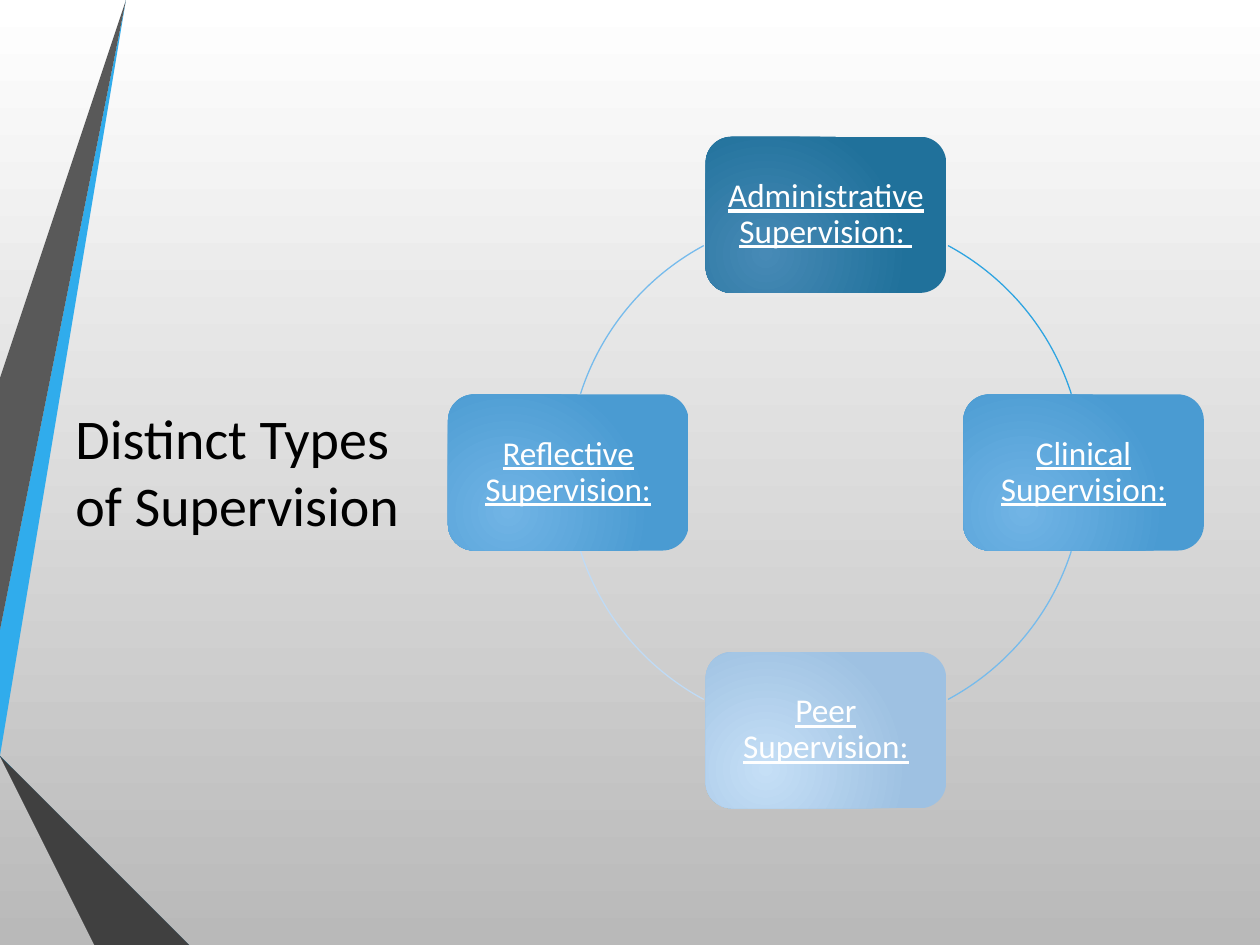
"""Build a slide showing four types of supervision around a ring."""
from typing import NamedTuple

import pptx
import pptx.dml.color
import pptx.enum.shapes
import pptx.enum.text
import pptx.oxml.ns
import pptx.util
from lxml import etree

Inches = pptx.util.Inches
Pt = pptx.util.Pt
MSO_SHAPE = pptx.enum.shapes.MSO_SHAPE

CENTER_X, CENTER_Y, RADIUS = 6.555, 3.75, 2.045
CARD_W, CARD_H = 1.91, 1.24


class Band(NamedTuple):
    color: str
    points: list[tuple[float, float]]


class Card(NamedTuple):
    text: str
    dx: int
    dy: int
    inner: str
    outer: str


class Arc(NamedTuple):
    start: float
    end: float
    color: str


BANDS = [
    Band("30ACEC", [(0, 5.44), (0, 5.75), (0.22, 5.79), (1.17, 0), (0.89, 0)]),
    Band("595959", [(0.83, 0), (0.55, 0), (0, 3.36), (0, 5.06)]),
    Band("262626", [(0, 6.19), (0, 6.21), (0.93, 7.5), (0.99, 7.5)]),
    Band("0C5A82", [(0, 5.79), (0, 5.8), (1.56, 7.5), (1.63, 7.5)]),
    Band("1287C3", [(0, 5.79), (1.63, 7.5), (2.33, 7.5), (0.22, 5.79), (0, 5.75)]),
    Band("404040", [(0, 6.19), (0.99, 7.5), (1.51, 7.5), (0, 5.86)]),
]
CARDS = [
    Card("Administrative Supervision: ", 0, -1, "478AB6", "20719B"),
    Card("Clinical Supervision:", 1, 0, "71B4E5", "4A9BD2"),
    Card("Peer Supervision:", 0, 1, "C5DFF6", "9EC1E2"),
    Card("Reflective Supervision:", -1, 0, "71B4E5", "4A9BD2"),
]
ARCS = [
    Arc(298.3, 342.2, "2EA4E1"),
    Arc(17.8, 61.7, "76BBEC"),
    Arc(118.3, 162.2, "BFDBF6"),
    Arc(197.8, 241.7, "76BBEC"),
]


def rgb(value: str) -> pptx.dml.color.RGBColor:
    return pptx.dml.color.RGBColor.from_string(value)


def set_gradient(fill, first: str, last: str) -> None:
    fill.gradient()
    for stop, color in zip(fill.gradient_stops, (first, last)):
        stop.color.rgb = rgb(color)


def make_radial(sp) -> None:
    qn = pptx.oxml.ns.qn
    grad = sp._element.spPr.find(qn("a:gradFill"))
    grad.remove(grad.find(qn("a:lin")))
    circle = etree.SubElement(grad, qn("a:path"))
    circle.set("path", "circle")
    rect = etree.SubElement(circle, qn("a:fillToRect"))
    for side, percent in zip("ltrb", (50, 100, 100, 50)):
        rect.set(side, str(percent * 1000))


def write(sp, text: str, size: float, color: str):
    tf = sp.text_frame
    tf.word_wrap = True
    tf.vertical_anchor = pptx.enum.text.MSO_ANCHOR.MIDDLE
    p = tf.paragraphs[0]
    p.text = text
    p.font.name = "Calibri"
    p.font.size = Pt(size)
    p.font.color.rgb = rgb(color)
    return p


def draw_band(s, band: Band) -> None:
    (x, y), *rest = band.points
    builder = s.shapes.build_freeform(x, y, scale=Inches(1))
    builder.add_line_segments(rest, close=True)
    sp = builder.convert_to_shape()
    sp.shadow.inherit = False
    sp.fill.solid()
    sp.fill.fore_color.rgb = rgb(band.color)
    sp.line.fill.background()


def draw_card(s, card: Card) -> None:
    left = CENTER_X + card.dx * RADIUS - CARD_W / 2
    top = CENTER_Y + card.dy * RADIUS - CARD_H / 2
    sp = s.shapes.add_shape(MSO_SHAPE.ROUNDED_RECTANGLE, Inches(left), Inches(top),
                            Inches(CARD_W), Inches(CARD_H))
    sp.shadow.inherit = False
    sp.line.fill.background()
    set_gradient(sp.fill, card.inner, card.outer)
    make_radial(sp)
    p = write(sp, card.text, 19, "FFFFFF")
    tf = sp.text_frame
    tf.margin_left = tf.margin_right = tf.margin_top = tf.margin_bottom = Inches(0.08)
    p.alignment = pptx.enum.text.PP_ALIGN.CENTER
    p.line_spacing = 0.9
    p.space_after = Pt(6.65)
    p.font.underline = True


def draw_arc(s, arc: Arc) -> None:
    sp = s.shapes.add_shape(MSO_SHAPE.ARC, Inches(CENTER_X - RADIUS), Inches(CENTER_Y - RADIUS),
                            Inches(2 * RADIUS), Inches(2 * RADIUS))
    sp.shadow.inherit = False
    sp.fill.background()
    sp.line.color.rgb = rgb(arc.color)
    sp.line.width = Pt(0.75)
    for i, degrees in enumerate((arc.start, arc.end)):
        sp.adjustments[i] = degrees * 0.6


def main() -> None:
    prs = pptx.Presentation()
    prs.slide_width, prs.slide_height = Inches(10), Inches(7.5)
    s = prs.slides.add_slide(prs.slide_layouts[6])
    background = s.background.fill
    set_gradient(background, "FFFFFF", "B9B9B9")
    background.gradient_angle = 270
    for band in BANDS:
        draw_band(s, band)
    title = s.shapes.add_textbox(Inches(0.5), Inches(1.37), Inches(2.83), Inches(4.73))
    write(title, "Distinct Types of Supervision", 32, "000000")
    for card, arc in zip(CARDS, ARCS):
        draw_card(s, card)
        draw_arc(s, arc)
    prs.save("out.pptx")


if __name__ == "__main__":
    main()
